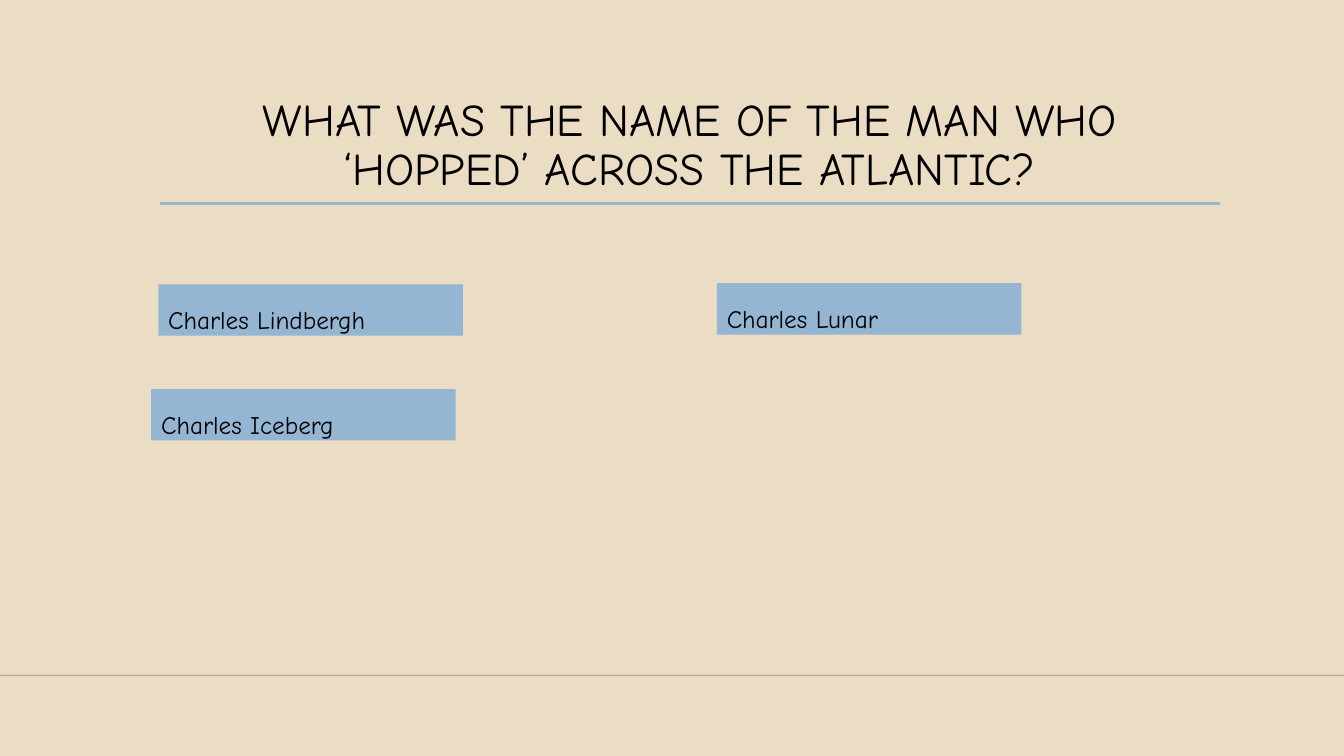
import dataclasses

import lxml.etree
import pptx
import pptx.dml.color
import pptx.enum.shapes
import pptx.enum.text
import pptx.oxml.ns
import pptx.util

Inches = pptx.util.Inches


@dataclasses.dataclass(frozen=True)
class Theme:
    """Colours and type sizes of the quiz slide."""
    sand: str = "EBDDC3"
    blue: str = "94B6D2"
    ink: str = "000000"
    floor: str = "000001"
    font: str = "Comic Neue"
    question_size: float = 32.4
    answer_size: float = 18


THEME = Theme()


def rgb(value):
    """Turn a hex string into a colour."""
    return pptx.dml.color.RGBColor.from_string(value)


def write(shape, text, size, align="LEFT", anchor="TOP", spacing=1.0):
    """Put formatted text into a shape."""
    frame = shape.text_frame
    frame.word_wrap = True
    frame.vertical_anchor = getattr(pptx.enum.text.MSO_ANCHOR, anchor)
    paragraph = frame.paragraphs[0]
    paragraph.alignment = getattr(pptx.enum.text.PP_ALIGN, align)
    paragraph.line_spacing = spacing
    run = paragraph.add_run()
    run.text = text
    run.font.name = THEME.font
    run.font.size = pptx.util.Pt(size)
    run.font.color.rgb = rgb(THEME.ink)


def add_rule(slide, left, top, width, color, weight, opacity=100):
    """Draw a flat horizontal line."""
    rule = slide.shapes.add_connector(
        pptx.enum.shapes.MSO_CONNECTOR.STRAIGHT,
        Inches(left), Inches(top), Inches(left + width), Inches(top))
    rule.line.color.rgb = rgb(color)
    rule.line.width = pptx.util.Pt(weight)
    qn = pptx.oxml.ns.qn
    properties = rule.element.spPr
    if opacity < 100:
        tint = properties.find(".//" + qn("a:srgbClr"))
        lxml.etree.SubElement(tint, qn("a:alpha")).set("val", str(opacity * 1000))
    lxml.etree.SubElement(properties, qn("a:effectLst"))


def add_question(slide, text, left, top, width, height):
    """Place the question with its underline."""
    add_rule(slide, left, top + height - 0.01, width + 0.01, THEME.blue, 2.5)
    question = slide.shapes.add_textbox(
        Inches(left), Inches(top), Inches(width), Inches(height))
    write(question, text, THEME.question_size,
          align="CENTER", anchor="MIDDLE", spacing=0.9)


def add_answer(slide, text, left, top, width=3.02, height=0.51):
    """Place one answer on a blue panel."""
    answer = slide.shapes.add_shape(
        pptx.enum.shapes.MSO_SHAPE.RECTANGLE,
        Inches(left), Inches(top), Inches(width), Inches(height))
    answer.shadow.inherit = False
    answer.fill.solid()
    answer.fill.fore_color.rgb = rgb(THEME.blue)
    answer.line.fill.background()
    write(answer, text, THEME.answer_size, spacing=1.5)
    answer.text_frame.auto_size = pptx.enum.text.MSO_AUTO_SIZE.SHAPE_TO_FIT_TEXT


def main():
    """Build and save the quiz slide."""
    deck = pptx.Presentation()
    deck.slide_width, deck.slide_height = Inches(13.33), Inches(7.5)
    slide = deck.slides.add_slide(deck.slide_layouts[6])
    slide.background.fill.solid()
    slide.background.fill.fore_color.rgb = rgb(THEME.sand)
    add_rule(slide, 0, 6.7, 13.33, THEME.floor, 1, opacity=20)
    add_question(
        slide, "WHAT WAS THE NAME OF THE MAN WHO ‘HOPPED’ ACROSS THE ATLANTIC?",
        1.59, 0.88, 10.5, 1.15)
    answers = (("Charles Lunar", 7.11, 2.81),
               ("Charles Lindbergh", 1.57, 2.82),
               ("Charles Iceberg", 1.5, 3.86))
    for name, left, top in answers:
        add_answer(slide, name, left, top)
    deck.save("out.pptx")


if __name__ == "__main__":
    main()
